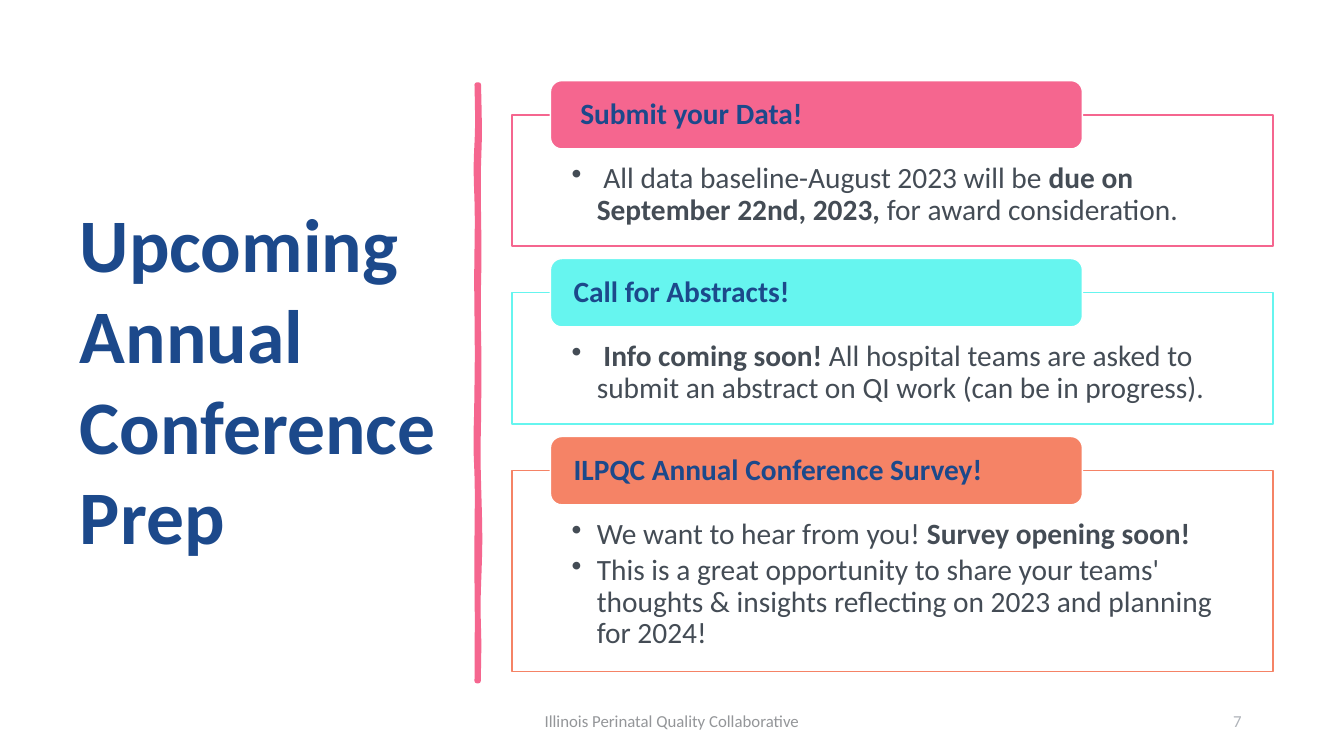
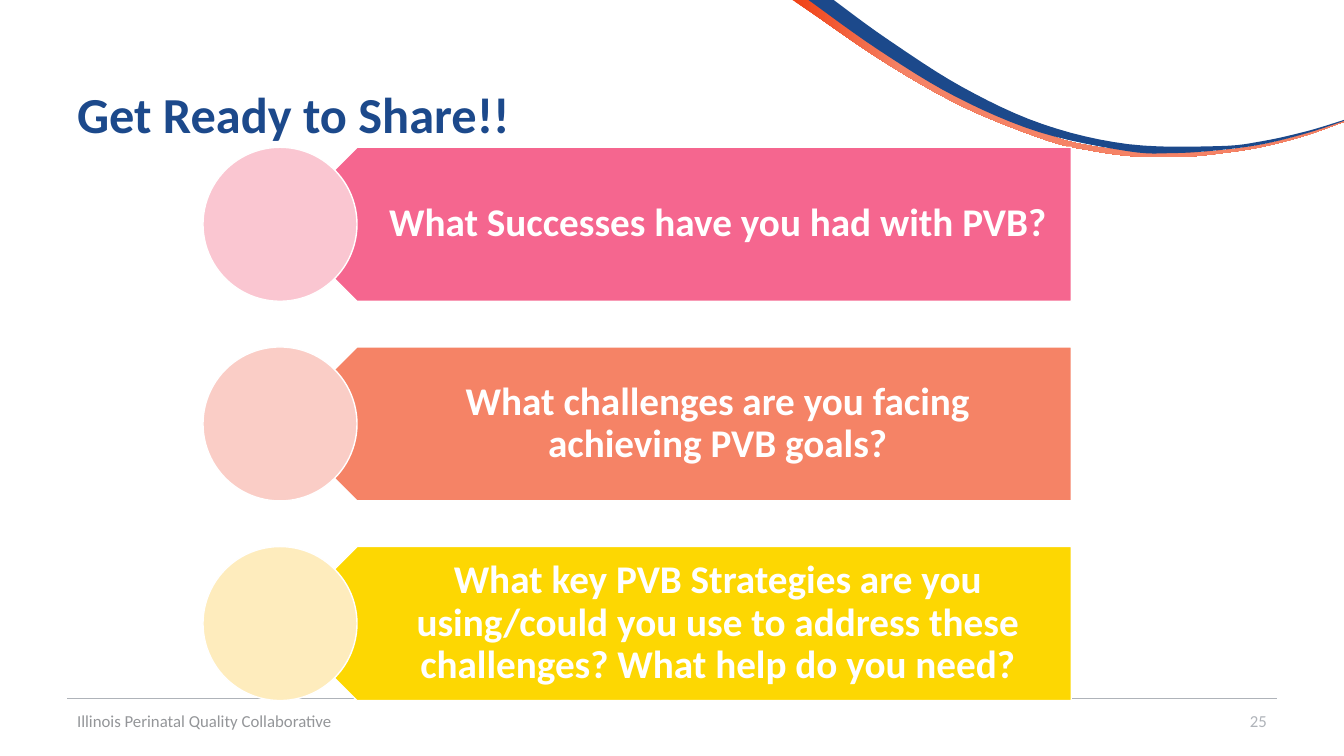
from lxml import etree
from pptx import Presentation
from pptx.dml.color import RGBColor
from pptx.enum.shapes import MSO_CONNECTOR, MSO_SHAPE
from pptx.enum.text import MSO_ANCHOR, PP_ALIGN
from pptx.oxml.ns import qn
from pptx.util import Pt

LEFT, CENTER, RIGHT = PP_ALIGN.LEFT, PP_ALIGN.CENTER, PP_ALIGN.RIGHT
TOP, MIDDLE = MSO_ANCHOR.TOP, MSO_ANCHOR.MIDDLE
RECT, ROUND_RECT = MSO_SHAPE.RECTANGLE, MSO_SHAPE.ROUNDED_RECTANGLE
PENTAGON, OVAL = MSO_SHAPE.PENTAGON, MSO_SHAPE.OVAL
STRAIGHT = MSO_CONNECTOR.STRAIGHT

NAVY, PINK, CORAL, RED = "1C498B", "F5668F", "F58366", "F04115"
AQUA, YELLOW, WHITE = "66F5EF", "FDD702", "FFFFFF"
BODY, FOOT, PALE = "444C55", "949699", "AFB3B9"
ORGANIZATION = "Illinois Perinatal Quality Collaborative"

# Edges of the corner swoosh, left to right
SWOOSH_CORAL = (
    [(580, 0), (635, 39), (690, 71), (748, 96), (778, 104), (810, 108),
     (841, 109.4), (873, 107.5), (904, 103), (935, 95), (960, 86.4)],
    [(566, 0), (579, 8.6), (632, 44.6), (688, 76.3), (747, 100), (778, 107.3),
     (809, 111.6), (842, 112.3), (873, 109.4), (901, 105), (932, 97), (960, 87)])
SWOOSH_NAVY = (
    [(595.5, 0), (633, 27.4), (687, 62), (744.5, 88.6), (806, 103),
     (870.5, 104.4), (902, 100.8), (934, 93.6), (960, 85.7)],
    [(577.5, 0), (627, 35.3), (682.5, 69), (742, 94.3), (805.5, 108),
     (838, 109.4), (870.5, 107.3), (902, 103), (934, 95), (960, 86.4)])
# Edges of the hand-drawn divider, top to bottom
DIVIDER = (
    [(340.6, 60.5), (341, 90), (340, 120), (340.8, 155), (340.4, 200), (340.8, 250),
     (340.4, 290), (339.9, 318), (340.8, 350), (340.5, 400), (340.8, 440), (340.6, 486.5)],
    [(342, 60.5), (342.6, 95), (341.8, 130), (342.3, 180), (341.8, 220), (342.3, 260),
     (342, 300), (341.7, 330), (342.9, 385), (341.7, 430), (342.2, 460), (341.8, 486.5)])


def rgb(value):
    return RGBColor.from_string(value)


def smooth(points, steps=6):
    """Catmull-Rom curve through the points."""
    ends = [points[0], *points, points[-1]]
    curve = []
    for a, b, c, d in zip(ends, ends[1:], ends[2:], ends[3:]):
        for t in (i / steps for i in range(steps)):
            curve.append(tuple(
                (2 * q + (r - p) * t + (2 * p - 5 * q + 4 * r - s) * t ** 2
                 + (3 * q - p - 3 * r + s) * t ** 3) / 2
                for p, q, r, s in zip(a, b, c, d)))
    return curve + [points[-1]]


class Deck:
    font = "Calibri"

    def __init__(self):
        self.prs = Presentation()
        self.prs.slide_width, self.prs.slide_height = Pt(960), Pt(540)
        self.s = None

    def slide(self):
        self.s = self.prs.slides.add_slide(self.prs.slide_layouts[6])

    def paint(self, sp, fill, line=None, weight=1.0):
        sp.shadow.inherit = False
        sp.fill.solid()
        sp.fill.fore_color.rgb = rgb(fill)
        if line:
            sp.line.color.rgb = rgb(line)
            sp.line.width = Pt(weight)
        else:
            sp.line.fill.background()

    def shape(self, kind, box, fill, line=WHITE):
        sp = self.s.shapes.add_shape(kind, *map(Pt, box))
        self.paint(sp, fill, line)
        return sp

    def ribbon(self, edges, fill, line=None, weight=1.0):
        first, second = map(smooth, edges)
        outline = [(Pt(x), Pt(y)) for x, y in first + second[::-1]]
        builder = self.s.shapes.build_freeform(*outline[0])
        builder.add_line_segments(outline[1:], close=True)
        sp = builder.convert_to_shape()
        self.paint(sp, fill, line, weight)
        return sp

    def rule(self, x1, y, x2, color):
        line = self.s.shapes.add_connector(STRAIGHT, *map(Pt, (x1, y, x2, y)))
        line.line.color.rgb = rgb(color)
        line.line.width = Pt(0.5)
        etree.SubElement(line._element.spPr, qn("a:effectLst"))

    def fill_text(self, sp, paragraphs, size, color, align=LEFT, anchor=MIDDLE,
                  insets=(7.2, 3.6, 7.2, 3.6), spacing=1.0, after=0, bullet=False):
        """Each paragraph is a list of (text, bold) runs."""
        tf = sp.text_frame
        frame = dict(word_wrap=True, vertical_anchor=anchor)
        sides = ("margin_left", "margin_top", "margin_right", "margin_bottom")
        frame.update(zip(sides, map(Pt, insets)))
        for name, value in frame.items():
            setattr(tf, name, value)
        for i, runs in enumerate(paragraphs):
            p = tf.add_paragraph() if i else tf.paragraphs[0]
            layout = dict(alignment=align, line_spacing=spacing, space_after=Pt(after))
            for name, value in layout.items():
                setattr(p, name, value)
            if bullet:
                pPr = p._p.get_or_add_pPr()
                pPr.set("marL", str(Pt(18)))
                pPr.set("indent", str(-Pt(18)))
                etree.SubElement(pPr, qn("a:buChar"), char="•")
            for text, bold in runs:
                r = p.add_run()
                r.text = text
                for name, value in dict(name=self.font, size=Pt(size), bold=bold).items():
                    setattr(r.font, name, value)
                r.font.color.rgb = rgb(color)

    def text(self, box, text, size, color, bold=False, **layout):
        sp = self.s.shapes.add_textbox(*map(Pt, box))
        self.fill_text(sp, [[(text, bold)]], size, color, **layout)

    def title(self, box, text, size):
        self.text(box, text, size, NAVY, bold=True)

    def footer(self, left, align, number_left, number):
        self.text((left, 500.4, 324, 28.8), ORGANIZATION, 12, FOOT, align=align)
        self.text((number_left, 500.4, 216, 28.8), number, 12, PALE, align=RIGHT)

    def swoosh(self):
        sp = self.ribbon(SWOOSH_CORAL, CORAL)
        sp.fill.gradient()
        sp.fill.gradient_angle = 0
        for stop, color, position in zip(sp.fill.gradient_stops, (RED, CORAL), (0, 0.2)):
            stop.color.rgb = rgb(color)
            stop.position = position
        self.ribbon(SWOOSH_NAVY, NAVY)

    def card(self, top, height, color, heading, paragraphs):
        body = self.shape(RECT, (365.8, top, 543.6, height), WHITE, color)
        self.fill_text(body, paragraphs, 21, BODY, anchor=TOP, spacing=0.9, after=3,
                       insets=(42.5, 34.6, 42.5, 11.5), bullet=True)
        tab = self.shape(ROUND_RECT, (393.2, top - 24.4, 380, 48.8), color)
        self.fill_text(tab, [[(heading, True)]], 21, NAVY, spacing=0.9,
                       insets=(14.2, 0, 14.2, 0))

    def question(self, top, color, tint, text):
        size = 110
        self.shape(PENTAGON, (200, top, 565.2, size), color).rotation = 180
        self.text((227.5, top, 537.8, size), text, 28, WHITE, bold=True, align=CENTER,
                  insets=(48.2, 8.6, 15.8, 8.6), spacing=0.9)
        self.shape(OVAL, (200 - size / 2, top, size, size), tint)


def main():
    deck = Deck()

    # Conference preparation
    deck.slide()
    deck.title((50, 50.4, 269.3, 440), "Upcoming Annual Conference Prep", 54)
    deck.ribbon(DIVIDER, PINK, PINK, 3.25)
    deck.footer(318, CENTER, 678, "7")
    cards = [
        (93.8, PINK, " Submit your Data!", [
            [(" All data baseline-August 2023 will be ", False),
             ("due on September 22nd, 2023,", True),
             (" for award consideration.", False)]]),
        (93.8, AQUA, "Call for Abstracts!", [
            [(" ", False), ("Info coming soon!", True),
             (" All hospital teams are asked to submit an abstract on QI work "
              "(can be in progress).", False)]]),
        (143.3, CORAL, "ILPQC Annual Conference Survey!", [
            [("We want to hear from you! ", False), ("Survey opening soon!", True)],
            [("This is a great opportunity to share your teams' thoughts & insights "
              "reflecting on 2023 and planning for 2024!", False)]]),
    ]
    top = 82
    for height, color, heading, paragraphs in cards:
        deck.card(top, height, color, heading, paragraphs)
        top += height + 33.3

    # Discussion questions
    deck.slide()
    deck.swoosh()
    deck.rule(48, 499, 912, PALE)
    deck.title((48, 28.8, 864, 104.4), "Get Ready to Share!!", 36)
    deck.footer(48, LEFT, 696, "25")
    questions = [
        (PINK, "FAC6D1", "What Successes have you had with PVB?"),
        (CORAL, "FACDC6", "What challenges are you facing achieving PVB goals?"),
        (YELLOW, "FEECBD", "What key PVB Strategies are you using/could you use to address "
                           "these challenges? What help do you need?"),
    ]
    for i, (color, tint, text) in enumerate(questions):
        deck.question(105.2 + i * 142.6, color, tint, text)

    deck.prs.save("out.pptx")


if __name__ == "__main__":
    main()
